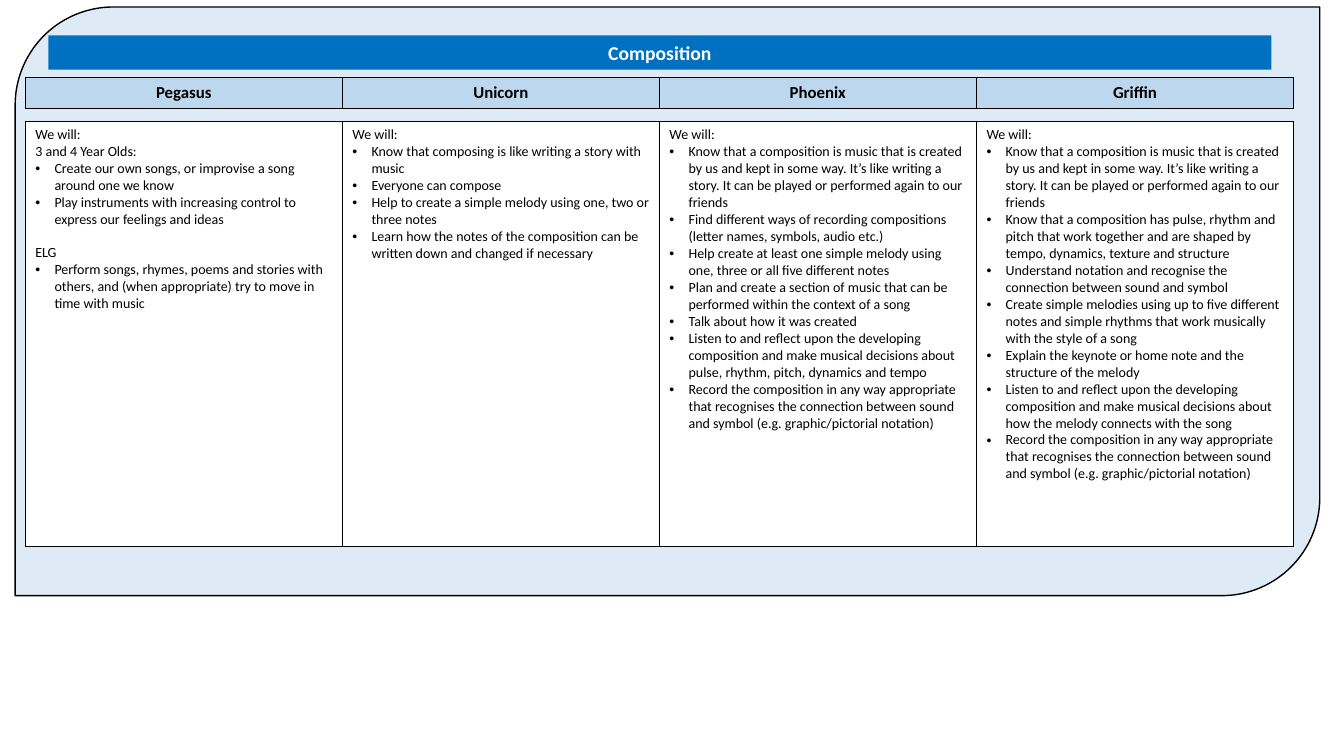
from lxml.etree import SubElement
from pptx import Presentation
from pptx.dml.color import RGBColor as RGB
from pptx.enum.shapes import MSO_SHAPE as SHAPE
from pptx.enum.text import MSO_ANCHOR as ANCHOR, PP_ALIGN as ALIGN
from pptx.oxml import parse_xml
from pptx.oxml.ns import nsdecls, qn
from pptx.util import Inches, Pt

THEME = {
    "font": "Calibri", "title": 14, "head": 12, "body": 10,
    "black": RGB.from_string("000000"), "white": RGB.from_string("FFFFFF"),
    "panel": RGB.from_string("DEEBF7"), "bar": RGB.from_string("0070C0"),
    "band": RGB.from_string("BDD7EE"),
}
BULLET = "• "
HANG = Inches(0.19)
WRITE_DOWN = ("• Record the composition in any way appropriate that recognises the "
              "connection between sound and symbol (e.g. graphic/pictorial notation)")
KEPT = ("• Know that a composition is music that is created by us and kept in some way. "
        "It’s like writing a story. It can be played or performed again to our friends")
REFLECT = "• Listen to and reflect upon the developing composition and make musical decisions about "

CLASSES = {
    "Pegasus": [
        "We will:",
        "3 and 4 Year Olds:",
        "• Create our own songs, or improvise a song around one we know",
        "• Play instruments with increasing control to express our feelings and ideas",
        "ELG",
        "• Perform songs, rhymes, poems and stories with others, and (when appropriate) "
        "try to move in time with music",
    ],
    "Unicorn": [
        "We will:",
        "• Know that composing is like writing a story with music",
        "• Everyone can compose",
        "• Help to create a simple melody using one, two or three notes",
        "• Learn how the notes of the composition can be written down and changed if necessary",
    ],
    "Phoenix": [
        "We will:",
        KEPT,
        "• Find different ways of recording compositions (letter names, symbols, audio etc.)",
        "• Help create at least one simple melody using one, three or all five different notes",
        "• Plan and create a section of music that can be performed within the context of a song",
        "• Talk about how it was created",
        REFLECT + "pulse, rhythm, pitch, dynamics and tempo",
        WRITE_DOWN,
    ],
    "Griffin": [
        "We will:",
        KEPT,
        "• Know that a composition has pulse, rhythm and pitch that work together and are "
        "shaped by tempo, dynamics, texture and structure",
        "• Understand notation and recognise the connection between sound and symbol",
        "• Create simple melodies using up to five different notes and simple rhythms that "
        "work musically with the style of a song",
        "• Explain the keynote or home note and the structure of the melody",
        REFLECT + "how the melody connects with the song",
        WRITE_DOWN,
    ],
}


def write(frame, text, size="body", color="black", bold=False, align=ALIGN.LEFT, gap=0):
    """Add one paragraph; a leading bullet mark becomes a real hanging bullet."""
    para = frame.paragraphs[0] if not frame.text else frame.add_paragraph()
    para.alignment = align
    para.space_before = Pt(gap)
    if text.startswith(BULLET):
        props = para._p.get_or_add_pPr()
        props.set("marL", str(HANG))
        props.set("indent", str(-HANG))
        SubElement(props, qn("a:buFont"), typeface="Arial")
        SubElement(props, qn("a:buChar"), char="•")
    run = para.add_run()
    run.text = text.removeprefix(BULLET)
    font = run.font
    font.name, font.size, font.bold = THEME["font"], Pt(THEME[size]), bold
    font.color.rgb = THEME[color]


def add_row(box, fill):
    """Add a one-row table with thin black borders and return its cells."""
    table = slide.shapes.add_table(1, len(CLASSES), *box).table
    table.first_row = table.horz_banding = False
    for cell in table.rows[0].cells:
        cell.fill.solid()
        cell.fill.fore_color.rgb = THEME[fill]
        props = cell._tc.get_or_add_tcPr()
        for spot, side in enumerate("LRTB"):
            props.insert(spot, parse_xml(
                f'<a:ln{side} {nsdecls("a")} w="{Pt(0.5)}"><a:solidFill>'
                f'<a:srgbClr val="{THEME["black"]}"/></a:solidFill></a:ln{side}>'))
    return table.rows[0].cells


deck = Presentation()
deck.slide_width, deck.slide_height = Inches(13.33), Inches(7.5)
slide = deck.slides.add_slide(deck.slide_layouts[6])

# Left, top, width and height in percent of the slide
wide, high = deck.slide_width / 100, deck.slide_height / 100
places = {
    "panel": (1.13, 0.93, 97.07, 77.87),
    "bar": (3.6, 4.67, 91, 4.53),
    "heads": (1.88, 10.27, 94.37, 4),
    "goals": (1.88, 16, 94.37, 56.27),
}
boxes = {name: [round(part * unit) for part, unit in zip(place, (wide, high) * 2)]
         for name, place in places.items()}

for name, kind in (("panel", SHAPE.ROUND_2_DIAG_RECTANGLE), ("bar", SHAPE.RECTANGLE)):
    shape = slide.shapes.add_shape(kind, *boxes[name])
    shape.shadow.inherit = False
    shape.fill.solid()
    shape.fill.fore_color.rgb = THEME[name]
    if name == "panel":
        shape.line.color.rgb = THEME["black"]
        shape.line.width = Pt(1)
    else:
        shape.line.fill.background()
        shape.text_frame.vertical_anchor = ANCHOR.MIDDLE
        write(shape.text_frame, "Composition", size="title", color="white",
              bold=True, align=ALIGN.CENTER)

heads = add_row(boxes["heads"], "band")
goals = add_row(boxes["goals"], "white")
for head, goal, (name, lines) in zip(heads, goals, CLASSES.items()):
    write(head.text_frame, name, size="head", bold=True, align=ALIGN.CENTER)
    for line in lines:
        write(goal.text_frame, line, gap=12 if line == "ELG" else 0)

deck.save("out.pptx")
